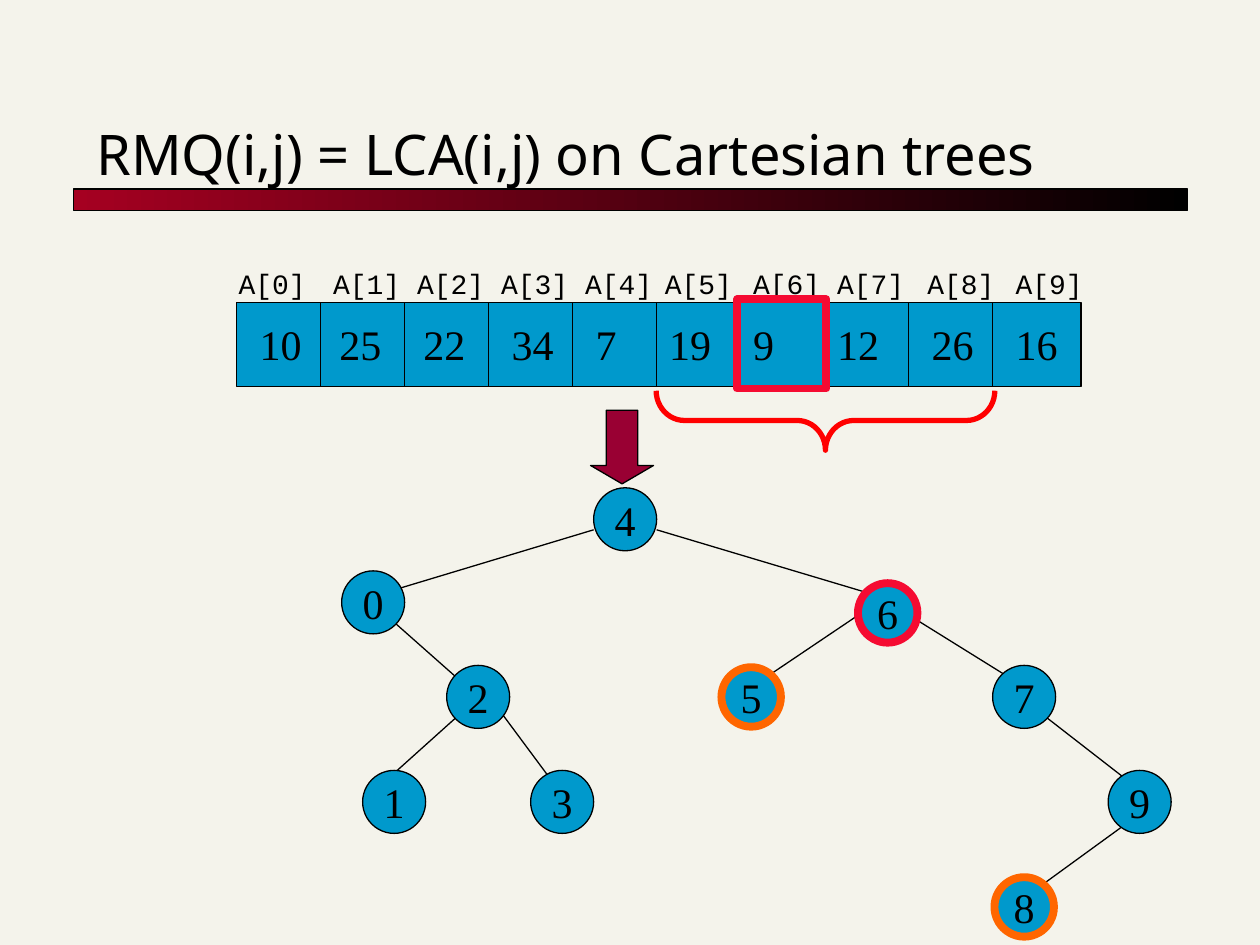
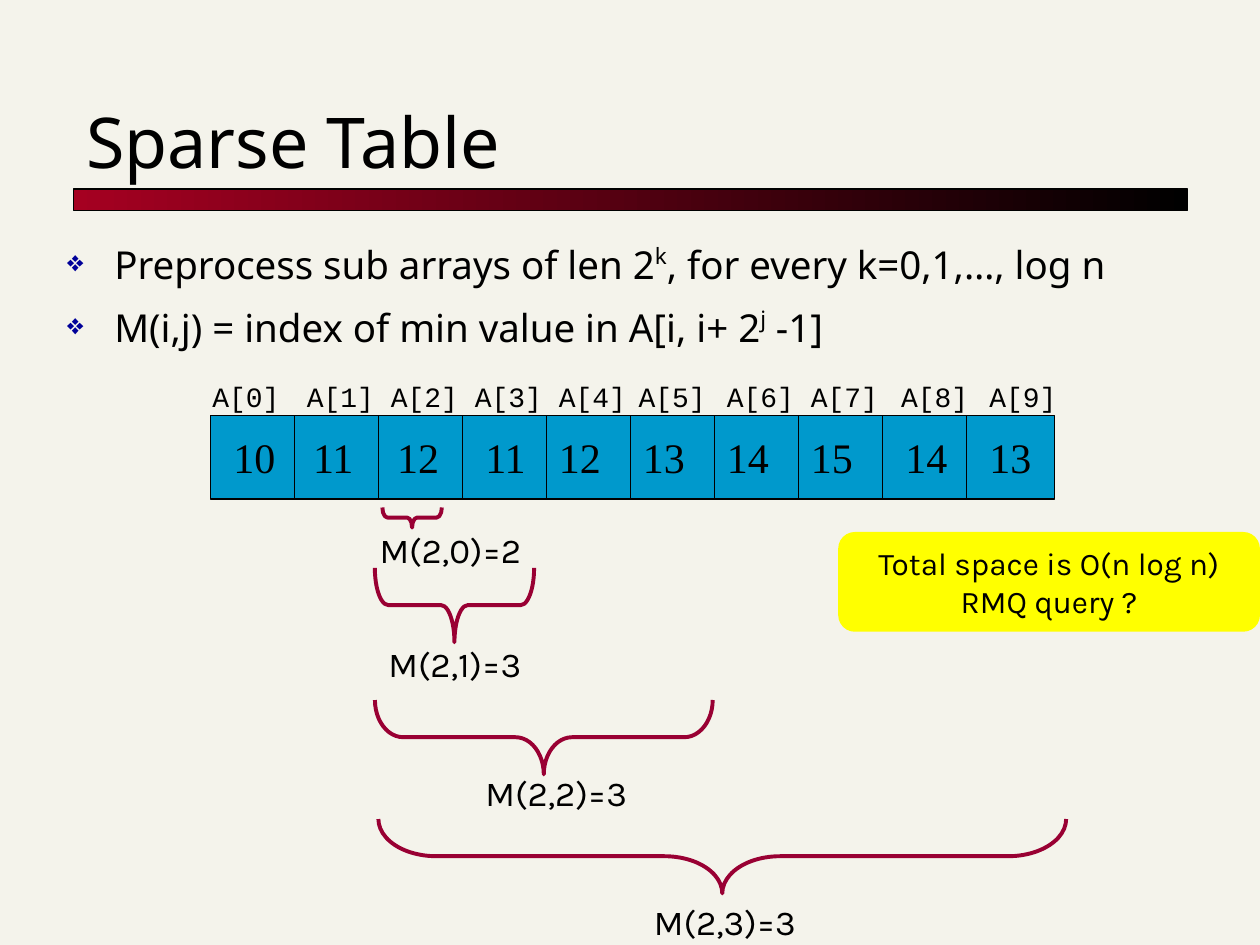
from lxml import etree
from pptx import Presentation
from pptx import util as u
from pptx.dml import color
from pptx.enum import shapes, text
from pptx.oxml import ns

HUES = {"back": "F4F3EB", "ink": "000000", "red": "A50021", "wine": "990033",
        "blue": "0099CC", "rose": "F50B32", "fire": "FF6600", "brace": "FF0000",
        "note": "FFFF00", "mark": "000099"}
SANS, SERIF, MONO, ROUND = "Noto Sans", "Times New Roman", "Courier New", "Karla"
KIND, SIDE, ROW = shapes.MSO_SHAPE, text.PP_ALIGN, text.MSO_ANCHOR
CELL, NODE = 48, 36
VALUE_SHIFT = [6, 3.6, 3.6, 6, 0, 0, 0, 0, 6, 6]
LABEL_SHIFT = [-6, 0, 0, 0, 0, -2.4, 0, 0, 3.6, 6]

NODES = {4: (144, 0), 0: (0, 47.5), 2: (60, 101.5), 1: (12, 161.5), 3: (108, 161.5),
         6: (294, 53.5), 5: (216, 101.5), 7: (372, 101.5), 9: (438, 161.5),
         8: (372, 221.5)}
EDGES = [(144, 24, 24.5, 60), (180, 24, 300.5, 60), (24.5, 72, 72, 114),
         (78.5, 119.5, 24.5, 168), (84.5, 119.5, 120.5, 168),
         (306, 65.5, 234, 114), (312.5, 65.5, 390.5, 114),
         (396, 126, 456.5, 173), (456.5, 186, 390.5, 234)]
RINGS = {5: "fire", 8: "fire", 6: "rose"}
SPANS = [("M(2,0)=2", (218.5, 290, 34, 11.5), 0.249, (207, 298.5)),
         ("M(2,1)=3", (214.25, 324.5, 91, 42.5), 0.18, (207, 363.5)),
         ("M(2,2)=3", (214.25, 400, 193, 42.5), 0.381, (267.5, 437.5)),
         ("M(2,3)=3", (216.25, 468, 393, 42.5), 0.778, (364, 511))]
POINTS = [("Preprocess sub arrays of len 2", "k", ", for every k=0,1,…, log n"),
          ("M(i,j) = index of min value in A[i, i+ 2", "j", " -1]")]


def hue(name):
    """Return the named colour."""
    return color.RGBColor.from_string(HUES[name])


def pts(*nums):
    """Turn numbers into lengths in points."""
    return [u.Pt(num) for num in nums]


def style(part, face, size):
    """Set the font of every run in a paragraph."""
    for run in part.runs:
        run.font.name, run.font.size = face, u.Pt(size)
        run.font.color.rgb = hue("ink")


def write(shape, words, face, size, side=SIDE.LEFT, row=ROW.TOP, wrap=False):
    """Put styled words into a shape."""
    frame = shape.text_frame
    frame.text = words
    frame.word_wrap, frame.vertical_anchor = wrap, row
    for part in frame.paragraphs:
        part.alignment = side
        style(part, face, size)


def label(slide, box, words, face, size, **more):
    """Add a text box."""
    write(slide.shapes.add_textbox(*pts(*box)), words, face, size, **more)


def draw(slide, kind, box, fill=None, line="ink", width=0.75):
    """Add a preset shape with a plain fill and outline."""
    shape = slide.shapes.add_shape(kind, *pts(*box))
    shape.shadow.inherit = False
    if fill:
        shape.fill.solid()
        shape.fill.fore_color.rgb = hue(fill)
    else:
        shape.fill.background()
    if line:
        shape.line.color.rgb = hue(line)
        shape.line.width = u.Pt(width)
    else:
        shape.line.fill.background()
    return shape


def link(slide, *ends):
    """Add a thin straight line."""
    line = slide.shapes.add_connector(shapes.MSO_CONNECTOR.STRAIGHT, *pts(*ends))
    line.line.color.rgb = hue("ink")
    line.line.width = u.Pt(0.75)
    etree.SubElement(line._element.spPr, ns.qn("a:effectLst"))


def brace(slide, box, bend, line, width):
    """Add a brace that fills the box and points down."""
    x, y, w, h = box
    turned = (x + (w - h) / 2, y + (h - w) / 2, h, w)
    shape = draw(slide, KIND.LEFT_BRACE, turned, None, line, width)
    shape.rotation = 270
    shape.adjustments[0] = bend


def start(deck, title, box, size):
    """Add a slide with its background, band and title."""
    slide = deck.slides.add_slide(deck.slide_layouts[6])
    slide.background.fill.solid()
    slide.background.fill.fore_color.rgb = hue("back")
    band = draw(slide, KIND.RECTANGLE, (42, 108, 636.5, 12.25))
    band.fill.gradient()
    band.fill.gradient_angle = 0
    for stop, name, place in zip(band.fill.gradient_stops, ("red", "ink"), (0, 1)):
        stop.color.rgb, stop.position = hue(name), place
    label(slide, box, title, SANS, size, row=ROW.BOTTOM, wrap=True)
    return slide


def array(slide, x, y, values):
    """Draw an indexed row of cells from its top left corner."""
    draw(slide, KIND.RECTANGLE, (x, y, CELL * len(values) + 2.5, CELL), "blue")
    for i, value in enumerate(values):
        left = x + CELL * i
        if i:
            link(slide, left, y, left, y + CELL)
        label(slide, (left + VALUE_SHIFT[i], y + 6, 44, 36), value, SERIF, 24)
        label(slide, (left + LABEL_SHIFT[i], y - 24, 53.5, 26.5), f"A[{i}]", MONO, 16)


def tree(slide, x, y):
    """Draw the Cartesian tree from its top left corner."""
    for a, b, c, d in EDGES:
        link(slide, x + a, y + b, x + c, y + d)
    for key, (a, b) in NODES.items():
        node = draw(slide, KIND.OVAL, (x + a, y + b, NODE, NODE), "blue")
        write(node, str(key), SERIF, 24, SIDE.CENTER, ROW.MIDDLE)
    for key, name in RINGS.items():
        a, b = NODES[key]
        draw(slide, KIND.OVAL, (x + a + 1, y + b + 1, NODE - 2, NODE - 2),
             None, name, 4.5)


def bullets(slide, box):
    """Write the bulleted points with raised exponents."""
    frame = slide.shapes.add_textbox(*pts(*box)).text_frame
    frame.word_wrap = True
    for i, pieces in enumerate(POINTS):
        part = frame.add_paragraph() if i else frame.paragraphs[0]
        for piece in pieces:
            part.add_run().text = piece
        style(part, SANS, 22)
        part.runs[1].font._element.set("baseline", "40000")
        part.line_spacing, part.space_before = 1.2, u.Pt(4.4)
        props = part._p.get_or_add_pPr()
        props.set("marL", str(u.Pt(27)))
        props.set("indent", str(u.Pt(-27)))
        tint = etree.SubElement(props, ns.qn("a:buClr"))
        etree.SubElement(tint, ns.qn("a:srgbClr"), val=HUES["mark"])
        etree.SubElement(props, ns.qn("a:buSzPct"), val="75000")
        etree.SubElement(props, ns.qn("a:buChar"), char="❖")


def spans(slide):
    """Draw each sub array brace with its label."""
    for words, box, bend, spot in SPANS:
        brace(slide, box, bend, "wine", 2.25)
        label(slide, (*spot, 98, 31), words, ROUND, 20, side=SIDE.RIGHT)


def note(slide, box):
    """Add the highlighted remark."""
    shape = draw(slide, KIND.ROUNDED_RECTANGLE, box, "note", None)
    write(shape, "Total space is O(n log n)\nRMQ query ?", ROUND, 18,
          SIDE.CENTER, ROW.MIDDLE)


def trees(deck):
    """Build the Cartesian tree slide."""
    slide = start(deck, "RMQ(i,j) = LCA(i,j) on Cartesian trees",
                  (48, 53, 612, 57), 32)
    x, y = 135.25, 172.75
    array(slide, x, y, ["10", "25", "22", "34", " 7", "19", "9", "12", "26", "16"])
    arrow = draw(slide, KIND.DOWN_ARROW, (337.5, 234.5, 36, 42), "wine")
    arrow.adjustments[1] = 0.292
    tree(slide, 195.25, 278.75)
    brace(slide, (x + 5 * CELL - 0.25, y + 50.5, 193.5, 34), 0.475, "brace", 3)
    draw(slide, KIND.RECTANGLE, (x + 6 * CELL - 2, y - 1.75, 51, 51),
         None, "rose", 4.5)


def sparse(deck):
    """Build the sparse table slide."""
    slide = start(deck, "Sparse Table", (42.25, 30, 636, 78), 40)
    bullets(slide, (31.25, 129, 669, 73.5))
    array(slide, 120.25, 237.25,
          ["10", "11", "12", "11", "12", "13", "14", "15", "14", "13"])
    spans(slide)
    note(slide, (479, 304, 241, 57))


def main():
    """Build and save the deck."""
    deck = Presentation()
    deck.slide_width, deck.slide_height = pts(720, 540)
    trees(deck)
    sparse(deck)
    deck.save("out.pptx")


if __name__ == "__main__":
    main()
